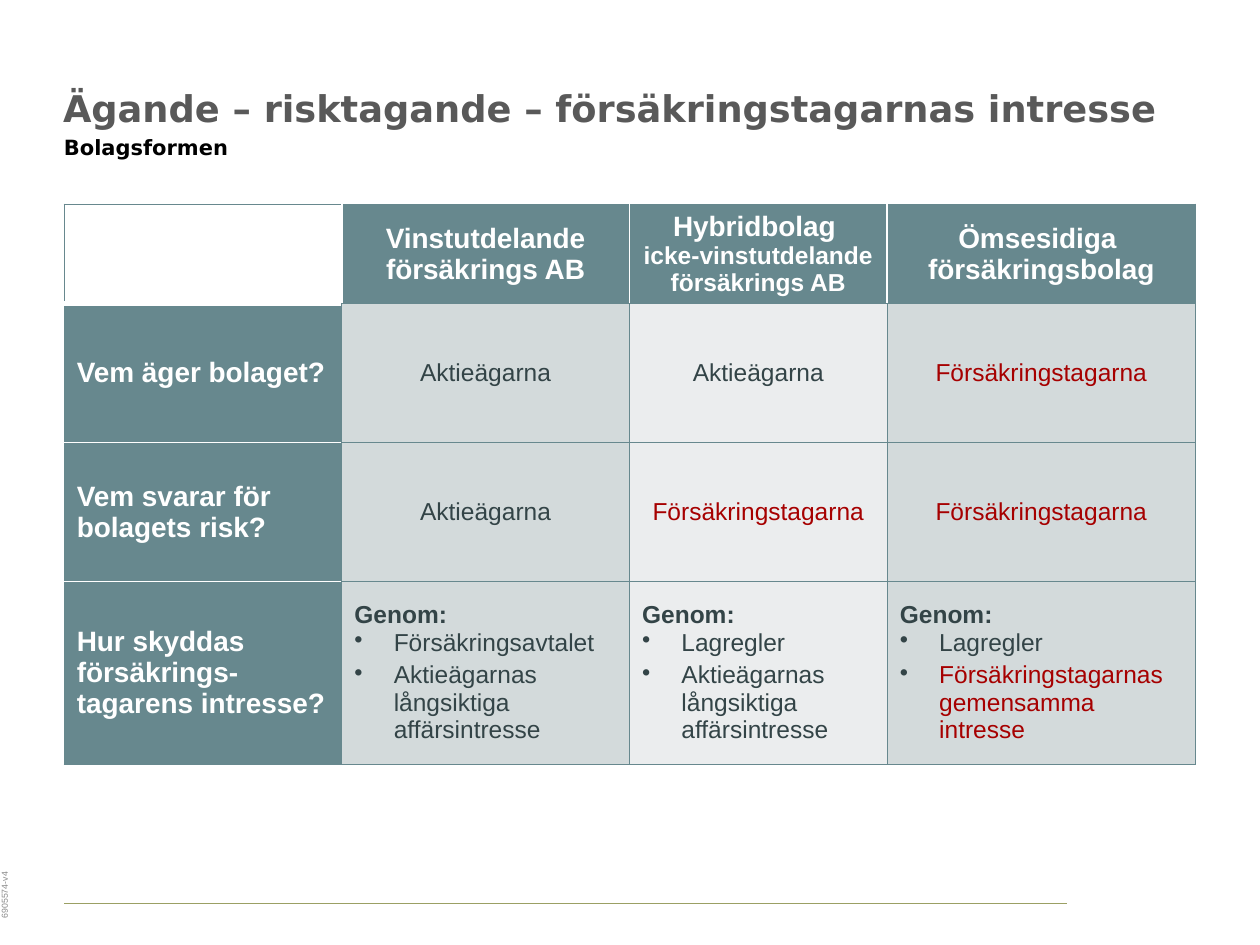
from dataclasses import dataclass

from lxml.etree import SubElement
from pptx import Presentation
from pptx.dml.color import RGBColor
from pptx.enum.shapes import MSO_CONNECTOR
from pptx.enum.text import MSO_ANCHOR, MSO_AUTO_SIZE, PP_ALIGN
from pptx.oxml.ns import qn
from pptx.util import Pt


@dataclass(frozen=True)
class Theme:
    """Colours, fonts and type sizes of the slide."""
    teal: str = "67888E"
    white: str = "FFFFFF"
    dark: str = "334447"
    red: str = "A60000"
    band: str = "D3DADB"
    pale: str = "EBEDEE"
    grey: str = "595959"
    black: str = "000000"
    mute: str = "898989"
    olive: str = "9BA064"
    face: str = "DejaVu Sans"
    sans: str = "Arial"
    title: float = 21
    lead: float = 12
    head: float = 16
    text: float = 14
    mark: float = 5


THEME = Theme()
COLS = (158.6, 164.4, 147.3, 176.2)
ROWS = (56.9, 79.3, 79.3, 104.5)
HEADS = (
    (("Vinstutdelande försäkrings AB", THEME.head),),
    (("Hybridbolag ", THEME.head),
     ("icke-vinstutdelande försäkrings AB", THEME.text)),
    (("Ömsesidiga \nförsäkringsbolag", THEME.head),),
)
ASKS = ("Vem äger bolaget?", "Vem svarar för bolagets risk?",
        "Hur skyddas försäkrings-tagarens intresse?")
OWNER, HOLDER = "Aktieägarna", "Försäkringstagarna"
GOAL = "Aktieägarnas långsiktiga affärsintresse"
WHO = ((OWNER, OWNER, HOLDER), (OWNER, HOLDER, HOLDER))
HOW = (("Försäkringsavtalet", GOAL), ("Lagregler", GOAL),
       ("Lagregler", "Försäkringstagarnas gemensamma intresse"))


def add_run(para, text, size, color, bold=False, face=THEME.sans):
    """Add one styled run, with a line break at each newline."""
    for num, part in enumerate(text.split("\n")):
        if num:
            para.add_line_break()
        run = para.add_run()
        run.text = part
        font = run.font
        font.name, font.size, font.bold = face, Pt(size), bold
        font.color.rgb = RGBColor.from_string(color)


def place(shape, box):
    """Move a shape to a box of left, top, width and height."""
    shape.left, shape.top, shape.width, shape.height = map(Pt, box)


def set_frame(frame, pads, anchor=MSO_ANCHOR.TOP, wrap=True):
    """Set insets, anchor and wrapping of a text frame."""
    frame.auto_size, frame.word_wrap = MSO_AUTO_SIZE.NONE, wrap
    frame.vertical_anchor = anchor
    (frame.margin_left, frame.margin_top,
     frame.margin_right, frame.margin_bottom) = map(Pt, pads)


def add_rule(slide, left, top, width):
    """Draw the thin rule at the foot."""
    rule = slide.shapes.add_connector(
        MSO_CONNECTOR.STRAIGHT, Pt(left), Pt(top), Pt(left + width), Pt(top))
    rule.line.color.rgb = RGBColor.from_string(THEME.olive)
    rule.line.width = Pt(0.75)
    SubElement(rule._element.spPr, qn("a:effectLst"))


def fill_heading(slide, left, top, width):
    """Fill the title and the lead line below it."""
    title, lead = slide.shapes.title, slide.placeholders[1]
    place(title, (left, top, width, 51.1))
    set_frame(title.text_frame, (0, 3.6, 0, 3.6), MSO_ANCHOR.BOTTOM)
    para = title.text_frame.paragraphs[0]
    para.alignment = PP_ALIGN.LEFT
    add_run(para, "Ägande – risktagande – försäkringstagarnas intresse",
            THEME.title, THEME.grey, True, THEME.face)

    place(lead, (left + 0.5, top + 51.1, width, 21.6))
    set_frame(lead.text_frame, (0, 0, 7.2, 0))
    para = lead.text_frame.paragraphs[0]
    props = para._p.get_or_add_pPr()
    props.set("marL", "0")
    props.set("indent", "0")
    SubElement(props, qn("a:buNone"))
    para.line_spacing, para.space_before = 0.95, Pt(0)
    add_run(para, "Bolagsformen", THEME.lead, THEME.black, True, THEME.face)


def style_cell(cell, fill, white=None):
    """Fill a cell and edge it in teal, or white on the sides given."""
    white = white or {}
    props = cell._tc.get_or_add_tcPr()
    for side in "LRTB":
        edge = SubElement(props, qn(f"a:ln{side}"),
                          w=str(Pt(white.get(side, 0.75))))
        solid = SubElement(edge, qn("a:solidFill"))
        SubElement(solid, qn("a:srgbClr"),
                   val=THEME.white if side in white else THEME.teal)
    cell.fill.solid()
    cell.fill.fore_color.rgb = RGBColor.from_string(fill)
    cell.vertical_anchor = MSO_ANCHOR.MIDDLE


def add_fact(para, text):
    """Add body text, in red where it names the policy holders."""
    tone = THEME.red if text.startswith(HOLDER) else THEME.dark
    add_run(para, text, THEME.text, tone)


def fill_how(frame, items):
    """Write the lead word and its bullet list."""
    add_run(frame.paragraphs[0], "Genom:", THEME.text, THEME.dark, True)
    for num, item in enumerate(items):
        para = frame.add_paragraph()
        props = para._p.get_or_add_pPr()
        props.set("marL", str(Pt(22.5)))
        props.set("indent", str(Pt(-22.5)))
        tint = SubElement(props, qn("a:buClr"))
        SubElement(tint, qn("a:srgbClr"), val=THEME.dark)
        SubElement(props, qn("a:buChar"), char="•")
        para.space_before = Pt(3 * num)
        add_fact(para, item)


def add_grid(slide, left, top):
    """Build the table that compares the company forms."""
    grid = slide.shapes.add_table(
        len(ROWS), len(COLS), Pt(left), Pt(top),
        Pt(sum(COLS)), Pt(sum(ROWS))).table
    grid.first_row = grid.horz_banding = False
    for col, width in zip(grid.columns, COLS):
        col.width = Pt(width)
    for row, height in zip(grid.rows, ROWS):
        row.height = Pt(height)

    style_cell(grid.cell(0, 0), THEME.white, {"R": 1, "B": 3})
    for col, lines in enumerate(HEADS, 1):
        cell = grid.cell(0, col)
        sides = {"L": 1} if col == len(HEADS) else {"L": 1, "R": 1}
        style_cell(cell, THEME.teal, sides)
        frame = cell.text_frame
        for num, (text, size) in enumerate(lines):
            para = frame.add_paragraph() if num else frame.paragraphs[0]
            para.alignment = PP_ALIGN.CENTER
            add_run(para, text, size, THEME.white, True)

    for row, ask in enumerate(ASKS, 1):
        cell = grid.cell(row, 0)
        sides = {"T": 3 if row == 1 else 1}
        if row < len(ASKS):
            sides["B"] = 1
        style_cell(cell, THEME.teal, sides)
        add_run(cell.text_frame.paragraphs[0], ask,
                THEME.head, THEME.white, True)
        for col in range(1, len(COLS)):
            cell = grid.cell(row, col)
            style_cell(cell, THEME.pale if col == 2 else THEME.band)
            if row > len(WHO):
                fill_how(cell.text_frame, HOW[col - 1])
            else:
                para = cell.text_frame.paragraphs[0]
                para.alignment = PP_ALIGN.CENTER
                add_fact(para, WHO[row - 1][col - 1])


def add_mark(slide, box):
    """Add the upright document number."""
    frame = slide.shapes.add_textbox(*map(Pt, box)).text_frame
    set_frame(frame, (0, 3.6, 7.2, 15.1), wrap=False)
    frame._txBody.bodyPr.set("vert", "vert270")
    para = frame.paragraphs[0]
    para.line_spacing = 0.95
    add_run(para, "6905574-v4", THEME.mark, THEME.mute)


def main():
    """Build and save the slide."""
    deck = Presentation()
    deck.slide_width, deck.slide_height = Pt(720), Pt(540)
    slide = deck.slides.add_slide(deck.slide_layouts[1])
    fill_heading(slide, 36, 26.6, 646.5)
    add_rule(slide, 36.7, 516.2, 573)
    add_grid(slide, 36.7, 116.7)
    add_mark(slide, (0, 494.6, 13, 45.4))
    deck.save("out.pptx")


if __name__ == "__main__":
    main()
